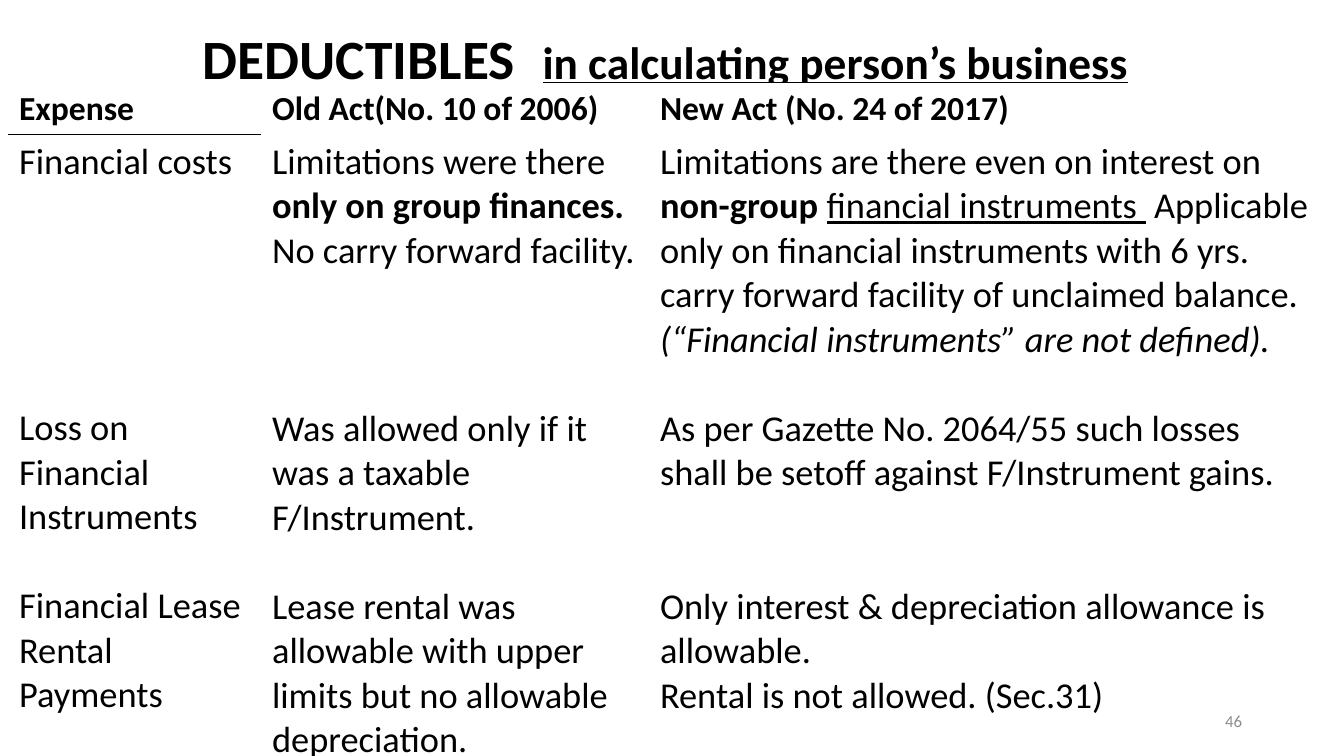
from lxml.etree import SubElement
from pptx import Presentation
from pptx.dml.color import RGBColor
from pptx.enum.text import MSO_ANCHOR, PP_ALIGN
from pptx.oxml.ns import qn
from pptx.util import Emu, Pt

EMU_PER_PX = 914400 / 100.8
BLACK = RGBColor(0x00, 0x00, 0x00)
WHITE = RGBColor(0xFF, 0xFF, 0xFF)
GRAY = RGBColor(0x8C, 0x8C, 0x8C)
FONT = "Calibri"
HEADER_SIZE = 24
BODY_SIZE = 26
BODY_LINE = BODY_SIZE * 1.22

COLUMN_WIDTHS = (253, 388, 672)
ROW_HEIGHTS = (49, 613)
HEADERS = ("Expense", "Old Act(No. 10 of 2006)", "New Act (No. 24 of 2017)")

# Each column lists paragraphs as (lines of space before, [(text, styles), ...]).
COLUMNS = (
    (
        (0, [("Financial costs", "")]),
        (5, [("Loss on Financial Instruments", "")]),
        (1, [("Financial Lease Rental Payments", "")]),
    ),
    (
        (0, [("Limitations were there ", ""), ("only on group finances.", "b")]),
        (0, [("No carry forward facility.", "")]),
        (3, [("Was allowed only if it was a taxable F/Instrument.", "")]),
        (1, [("Lease rental was allowable with upper limits but no allowable depreciation.", "")]),
    ),
    (
        (0, [
            ("Limitations are there even on interest on ", ""),
            ("non-group ", "b"),
            ("financial instruments ", "u"),
            (" ", ""),
            ("Applicable only on financial instruments with 6 yrs. "
             "carry forward facility of unclaimed balance.", ""),
            (" (“Financial instruments” are not defined).", "i"),
        ]),
        (1, [("As per Gazette No. 2064/55 such losses shall be setoff "
              "against F/Instrument gains.", "")]),
        (2, [("Only interest & depreciation allowance is allowable.", "")]),
        (0, [("Rental is not allowed. (Sec.31)", "")]),
    ),
)


def px(length):
    return Emu(round(length * EMU_PER_PX))


def add_span(para, text, size, styles="", color=BLACK):
    """Add a run; styles holds any of b (bold), i (italic), u (underline)."""
    span = para.add_run()
    span.text = text
    font = span.font
    font.name = FONT
    font.size = Pt(size)
    font.bold = "b" in styles
    font.italic = "i" in styles
    font.underline = "u" in styles
    font.color.rgb = color


def add_box(page, left, top, width, height, align):
    """Add a middle-anchored text box and return its frame and first paragraph."""
    frame = page.shapes.add_textbox(px(left), px(top), px(width), px(height)).text_frame
    frame.word_wrap = True
    frame.vertical_anchor = MSO_ANCHOR.MIDDLE
    para = frame.paragraphs[0]
    para.alignment = align
    return frame, para


def add_title(page):
    frame, para = add_box(page, 9, 31, 1313, 76, PP_ALIGN.CENTER)
    frame.margin_top = 0
    frame.margin_bottom = px(58)
    para.line_spacing = 0.9
    add_span(para, "DEDUCTIBLES", 39.6, "b")
    add_span(para, " ", 86.4, "b")
    add_span(para, "in calculating person’s business", 32.4, "bu")


def set_border(cell, side, color):
    properties = cell._tc.get_or_add_tcPr()
    line = SubElement(properties, qn(f"a:ln{side}"), w=str(Pt(1)))
    fill = SubElement(line, qn("a:solidFill"))
    SubElement(fill, qn("a:srgbClr"), val=str(color))


def fill_white(cell):
    cell.fill.solid()
    cell.fill.fore_color.rgb = WHITE


def fill_body_cell(cell, paragraphs):
    frame = cell.text_frame
    for index, (lines_before, spans) in enumerate(paragraphs):
        para = frame.add_paragraph() if index else frame.paragraphs[0]
        if lines_before:
            para.space_before = Pt(lines_before * BODY_LINE)
        for text, styles in spans:
            add_span(para, text, BODY_SIZE, styles)


def add_comparison(page):
    table = page.shapes.add_table(
        len(ROW_HEIGHTS), len(COLUMN_WIDTHS), px(9), px(84),
        px(sum(COLUMN_WIDTHS)), px(sum(ROW_HEIGHTS))).table
    for row, height in zip(table.rows, ROW_HEIGHTS):
        row.height = px(height)
    for index, width in enumerate(COLUMN_WIDTHS):
        table.columns[index].width = px(width)
        header, body = table.cell(0, index), table.cell(1, index)
        if index == 0:
            set_border(header, "B", BLACK)
            set_border(body, "T", BLACK)
        fill_white(header)
        fill_white(body)
        add_span(header.text_frame.paragraphs[0], HEADERS[index], HEADER_SIZE, "b")
        fill_body_cell(body, COLUMNS[index])


def add_page_number(page):
    _, para = add_box(page, 950, 701, 302, 40, PP_ALIGN.RIGHT)
    add_span(para, "46", 12, color=GRAY)


def main():
    deck = Presentation()
    deck.slide_width = px(1344)
    deck.slide_height = px(756)
    page = deck.slides.add_slide(deck.slide_layouts[6])
    add_title(page)
    add_comparison(page)
    add_page_number(page)
    deck.save("out.pptx")


if __name__ == "__main__":
    main()
